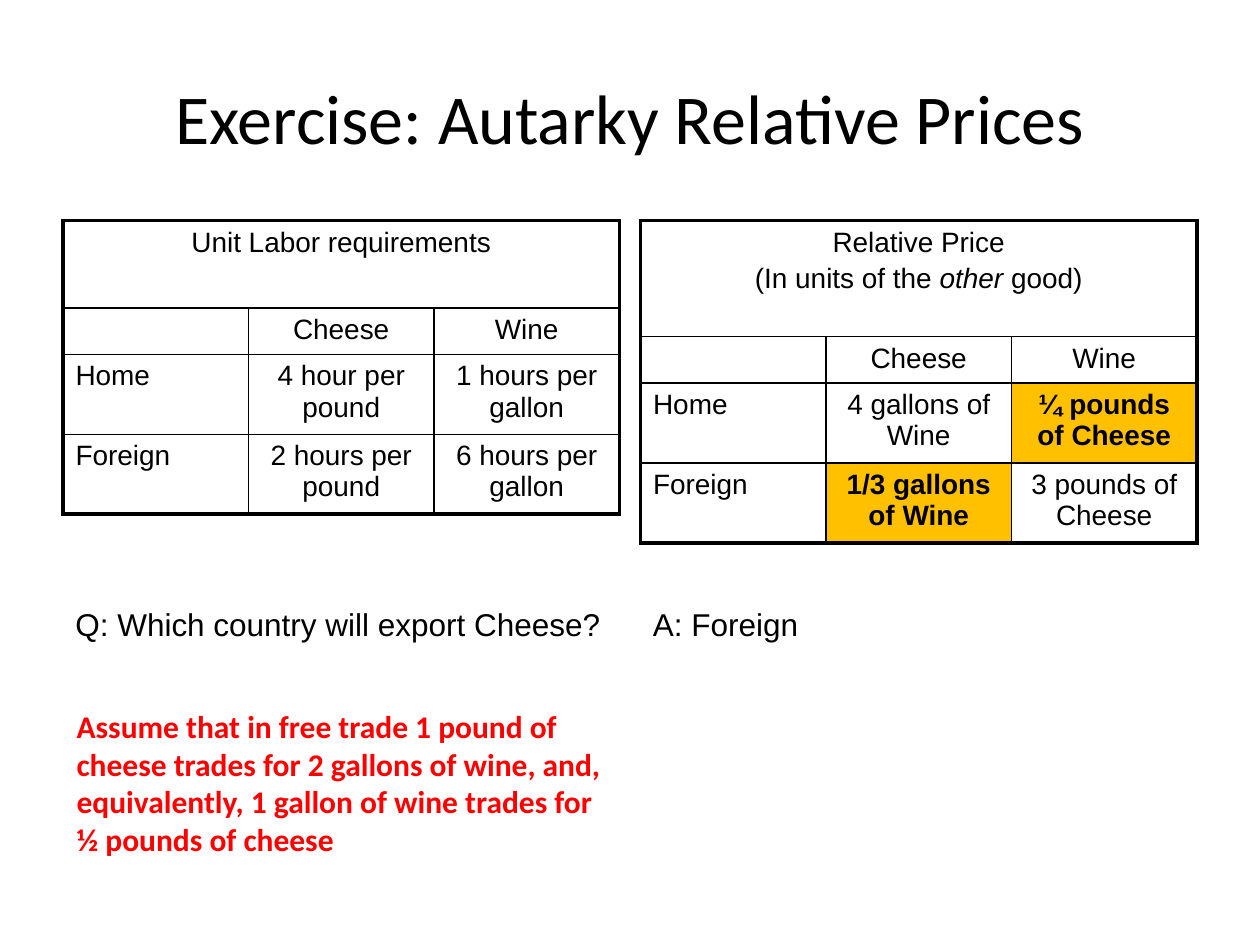
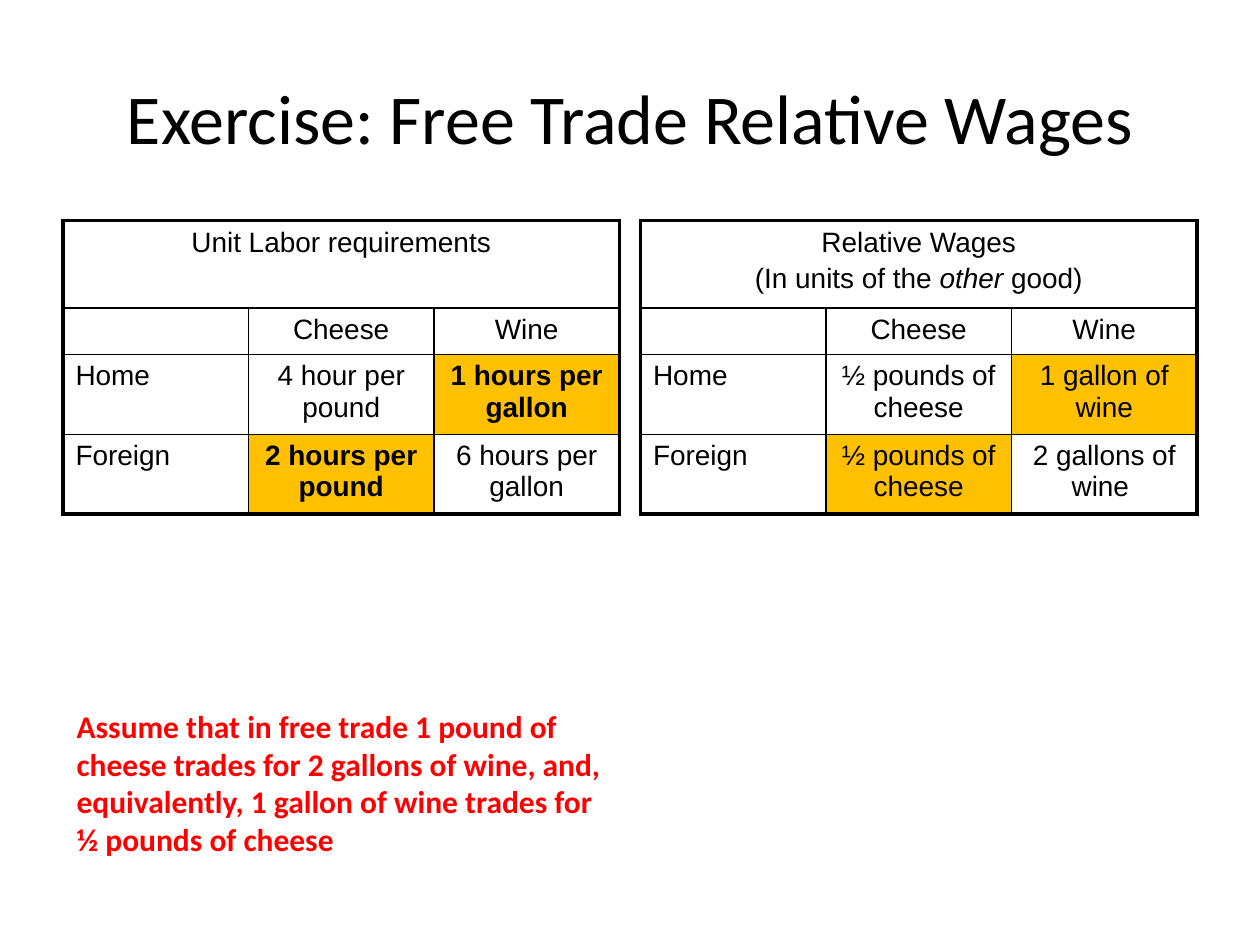
from dataclasses import dataclass

from lxml import etree
from pptx import Presentation
from pptx import util as u
from pptx.dml import color
from pptx.enum import text
from pptx.oxml import ns

Pt = u.Pt


@dataclass(frozen=True)
class Theme:
    ink: str = "000000"
    alert: str = "FF0000"
    highlight: str = "FFC000"
    heading_font: str = "Calibri"
    body_font: str = "Arial"
    title_size: float = 40
    note_size: float = 18
    table_size: float = 16
    thick: float = 2.25
    thin: float = 1


# Shared layout, in points
LEFT, RIGHT, HALF_WIDTH = 36, 366, 318
TABLE_TOP, QUESTION_TOP, ASSUMPTION_TOP = 126, 342, 400.3
HEADING_HEIGHT, TALL_HEADING_HEIGHT = 50, 66.4
BODY_HEIGHTS = [26.6, 45.6, 45.6]
WINNERS = {(2, 2), (3, 1)}  # wine at Home, cheese in Foreign

# Shared content
LABOR = [["4 hour per pound", "1 hours per gallon"],
         ["2 hours per pound", "6 hours per gallon"]]
ASSUMPTION = ("Assume that in free trade 1 pound of cheese trades for 2 gallons "
              "of wine, and, equivalently, 1 gallon of wine trades for "
              "½ pounds of cheese")


class Deck:
    def __init__(self, theme):
        self.theme = theme
        self.prs = Presentation()
        self.prs.slide_width, self.prs.slide_height = Pt(720), Pt(540)
        self.slide = None

    def new_slide(self, title):
        self.slide = self.prs.slides.add_slide(self.prs.slide_layouts[6])
        heading = self.note(title, LEFT, 21.6, 648, 90, self.theme.heading_font,
                            size=self.theme.title_size)
        heading.vertical_anchor = text.MSO_ANCHOR.MIDDLE
        heading.paragraphs[0].alignment = text.PP_ALIGN.CENTER

    def style(self, paragraph, font, size, ink=None, bold=False):
        paragraph.font.name = font
        paragraph.font.size = Pt(size)
        paragraph.font.bold = bold
        paragraph.font.color.rgb = color.RGBColor.from_string(ink or self.theme.ink)

    def note(self, words, left, top, width, height, font, size=None, ink=None,
             bold=False):
        box = self.slide.shapes.add_textbox(Pt(left), Pt(top), Pt(width), Pt(height))
        frame = box.text_frame
        frame.word_wrap = True
        frame.text = words
        self.style(frame.paragraphs[0], font, size or self.theme.note_size, ink, bold)
        return frame

    def assumption(self):
        self.note(ASSUMPTION, LEFT + 0.7, ASSUMPTION_TOP, HALF_WIDTH, 94.3,
                  self.theme.heading_font, ink=self.theme.alert, bold=True)

    def borders(self, cell, **widths):
        properties = cell._tc.get_or_add_tcPr()
        for side, width in widths.items():
            line = etree.SubElement(properties, ns.qn(f"a:ln{side}"), w=str(Pt(width)))
            fill = etree.SubElement(line, ns.qn("a:solidFill"))
            etree.SubElement(fill, ns.qn("a:srgbClr"), val=self.theme.ink)

    def table(self, left, heading, values, in_other_good=False,
              highlighted=True, bold_winners=False, heading_height=HEADING_HEIGHT):
        theme = self.theme
        heights = [heading_height] + BODY_HEIGHTS
        rows = [[heading, "", ""], ["", "Cheese", "Wine"],
                ["Home"] + values[0], ["Foreign"] + values[1]]
        table = self.slide.shapes.add_table(
            4, 3, Pt(left), Pt(TABLE_TOP), Pt(HALF_WIDTH), Pt(sum(heights))).table
        table.first_row = table.horz_banding = False
        for row, height in zip(table.rows, heights):
            row.height = Pt(height)
        table.cell(0, 0).merge(table.cell(0, 2))

        for r, row in enumerate(rows):
            for c, words in enumerate(row):
                cell = table.cell(r, c)
                wins = highlighted and (r, c) in WINNERS
                cell.text = words
                # Thick frame outside, thin rules inside
                self.borders(cell,
                             L=theme.thick if c == 0 else theme.thin,
                             R=theme.thick if c == 2 or r == 0 else theme.thin,
                             T=theme.thick if r == 0 else theme.thin,
                             B=theme.thick if r == 3 else theme.thin)
                if wins:
                    cell.fill.solid()
                    cell.fill.fore_color.rgb = color.RGBColor.from_string(theme.highlight)
                else:
                    cell.fill.background()
                if r == 0 and c == 0 and in_other_good:
                    self.unit_line(cell.text_frame.add_paragraph())
                for paragraph in cell.text_frame.paragraphs:
                    self.style(paragraph, theme.body_font, theme.table_size,
                               bold=wins and bold_winners)
                    if r == 0 or c > 0:
                        paragraph.alignment = text.PP_ALIGN.CENTER

    def unit_line(self, paragraph):
        paragraph.space_before = Pt(3.2)
        for words, italic in (("(In units of the ", False), ("other", True),
                              (" good)", False)):
            run = paragraph.add_run()
            run.text = words
            run.font.italic = italic


def main():
    theme = Theme()
    deck = Deck(theme)

    # Autarky prices
    deck.new_slide("Exercise: Autarky Relative Prices")
    deck.table(LEFT, "Unit Labor requirements", LABOR, highlighted=False)
    deck.table(RIGHT, "Relative Price",
               [["4 gallons of Wine", "¼ pounds of Cheese"],
                ["1/3 gallons of Wine", "3 pounds of Cheese"]],
               in_other_good=True, bold_winners=True,
               heading_height=TALL_HEADING_HEIGHT)
    for left, words in ((LEFT, "Q: Which country will export Cheese?"),
                        (RIGHT, "A: Foreign")):
        deck.note(words, left, QUESTION_TOP, HALF_WIDTH, 28.8, theme.body_font)
    deck.assumption()

    # Free trade wages
    deck.new_slide("Exercise: Free Trade Relative Wages")
    deck.table(LEFT, "Unit Labor requirements", LABOR, bold_winners=True)
    deck.table(RIGHT, "Relative Wages",
               [["½ pounds of cheese", "1 gallon of wine"],
                ["½ pounds of cheese", "2 gallons of wine "]],
               in_other_good=True)
    deck.assumption()

    deck.prs.save("out.pptx")


if __name__ == "__main__":
    main()
